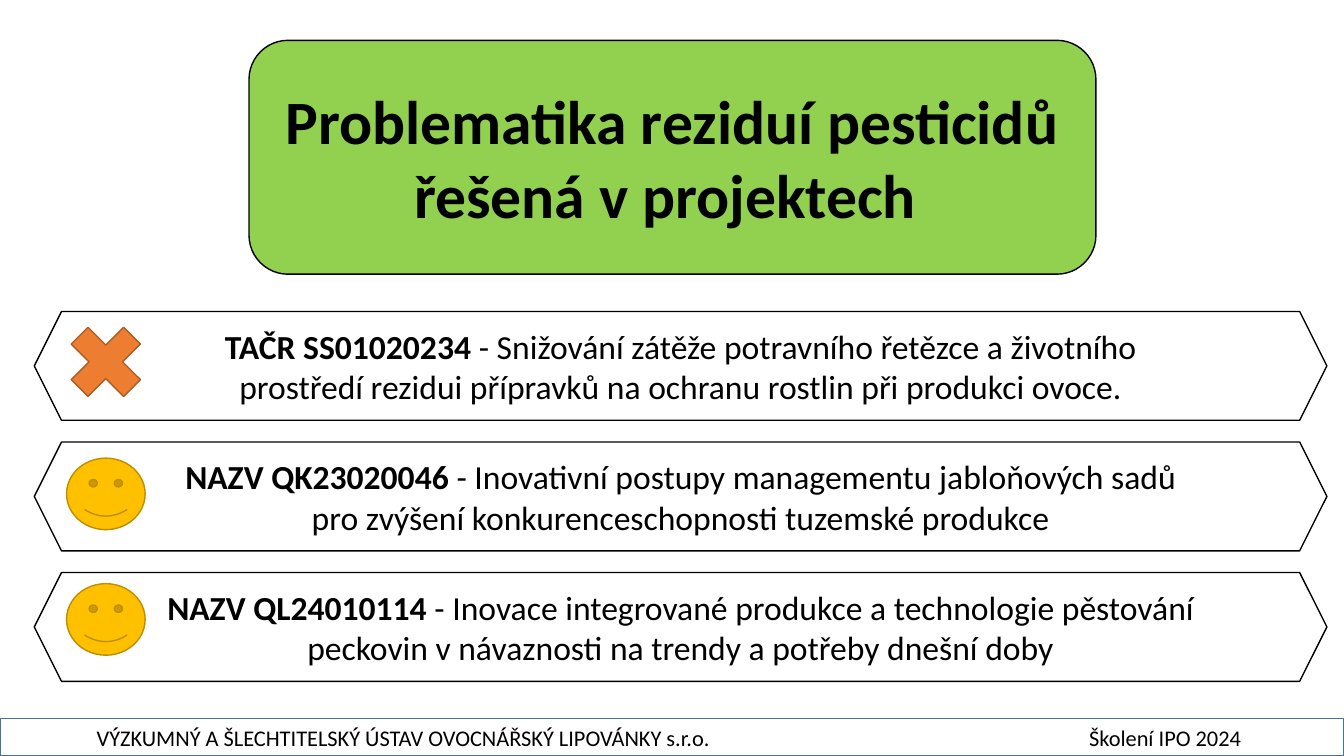
from lxml import etree
from pptx import Presentation
from pptx.dml.color import RGBColor
from pptx.enum.shapes import MSO_SHAPE
from pptx.enum.text import MSO_ANCHOR, PP_ALIGN
from pptx.oxml.ns import qn
from pptx.util import Inches, Pt

BLACK = RGBColor(0x00, 0x00, 0x00)
WHITE = RGBColor(0xFF, 0xFF, 0xFF)
GREEN = RGBColor(0x92, 0xD0, 0x50)
ORANGE = RGBColor(0xED, 0x7D, 0x31)
DARK_ORANGE = RGBColor(0xAF, 0x5C, 0x24)
YELLOW = RGBColor(0xFF, 0xC0, 0x00)
DARK_YELLOW = RGBColor(0xBD, 0x8E, 0x00)
BLUE = RGBColor(0x43, 0x73, 0x9E)

SLIDE_WIDTH, SLIDE_HEIGHT = 13.33, 7.5
PROJECT_TOP, PROJECT_STEP = 3.09, 1.295

# Code, description, whether the project goes on, top of its mark in the row
PROJECTS = [
    ("TAČR SS01020234 ", "- Snižování zátěže potravního řetězce a životního prostředí "
     "rezidui přípravků na ochranu rostlin při produkci ovoce.", False, 0),
    ("NAZV QK23020046 ", "- Inovativní postupy managementu jabloňových sadů "
     "pro zvýšení konkurenceschopnosti tuzemské produkce", True, 0.16),
    ("NAZV QL24010114 ", "- Inovace integrované produkce a technologie pěstování "
     "peckovin v návaznosti na trendy a potřeby dnešní doby", True, 0.11),
]


def add_outlined(slide, kind, box, fill, line):
    shape = slide.shapes.add_shape(kind, *(Inches(length) for length in box))
    shape.shadow.inherit = False
    shape.fill.solid()
    shape.fill.fore_color.rgb = fill
    shape.line.color.rgb = line
    shape.line.width = Pt(1)
    frame = shape.text_frame
    frame.word_wrap = True
    frame.vertical_anchor = MSO_ANCHOR.MIDDLE
    frame.paragraphs[0].alignment = PP_ALIGN.CENTER
    return shape


def add_text(paragraph, text, size, bold=False, color=BLACK):
    run = paragraph.add_run()
    run.text = text
    run.font.name = "Calibri"
    run.font.size = Pt(size)
    run.font.bold = bold
    run.font.color.rgb = color


def add_title(slide, box):
    title = add_outlined(slide, MSO_SHAPE.ROUNDED_RECTANGLE, box, GREEN, BLACK)
    add_text(title.text_frame.paragraphs[0],
             "Problematika reziduí pesticidů řešená v projektech ", size=44, bold=True)


def add_project(slide, box, code, description, ongoing, mark_offset):
    left, top, _, _ = box
    banner = add_outlined(slide, MSO_SHAPE.HEXAGON, box, WHITE, BLACK)
    paragraph = banner.text_frame.paragraphs[0]
    add_text(paragraph, code, size=24, bold=True)
    add_text(paragraph, description, size=24)

    # Status mark at the left end of the banner
    mark_top = top + mark_offset
    if ongoing:
        add_outlined(slide, MSO_SHAPE.SMILEY_FACE, (left + 0.32, mark_top, 0.78, 0.71),
                     YELLOW, DARK_YELLOW)
    else:
        add_outlined(slide, MSO_SHAPE.MATH_MULTIPLY, (left + 0.21, mark_top, 1, 1),
                     ORANGE, DARK_ORANGE)


def add_footer(slide, box, inset, event_end):
    footer = add_outlined(slide, MSO_SHAPE.RECTANGLE, box, WHITE, BLUE)
    footer.text_frame.margin_left = Inches(inset)
    paragraph = footer.text_frame.paragraphs[0]
    paragraph.alignment = PP_ALIGN.LEFT

    # Right tab that holds the end of the event name
    properties = paragraph._p.get_or_add_pPr()
    tabs = etree.SubElement(properties, qn("a:tabLst"))
    etree.SubElement(tabs, qn("a:tab"), pos=str(Inches(event_end - inset)), algn="r")
    add_text(paragraph, "VÝZKUMNÝ A ŠLECHTITELSKÝ ÚSTAV OVOCNÁŘSKÝ LIPOVÁNKY s.r.o."
             "\tŠkolení IPO 2024", size=16)


def main():
    presentation = Presentation()
    presentation.slide_width = Inches(SLIDE_WIDTH)
    presentation.slide_height = Inches(SLIDE_HEIGHT)
    slide = presentation.slides.add_slide(presentation.slide_layouts[6])

    add_title(slide, (2.47, 0.4, 8.4, 2.32))
    for row, project in enumerate(PROJECTS):
        add_project(slide, (0.34, PROJECT_TOP + row * PROJECT_STEP, 12.82, 1.08), *project)
    add_footer(slide, (0, 7.13, SLIDE_WIDTH, 0.37), inset=0.96, event_end=12.31)

    presentation.save("out.pptx")


if __name__ == "__main__":
    main()
